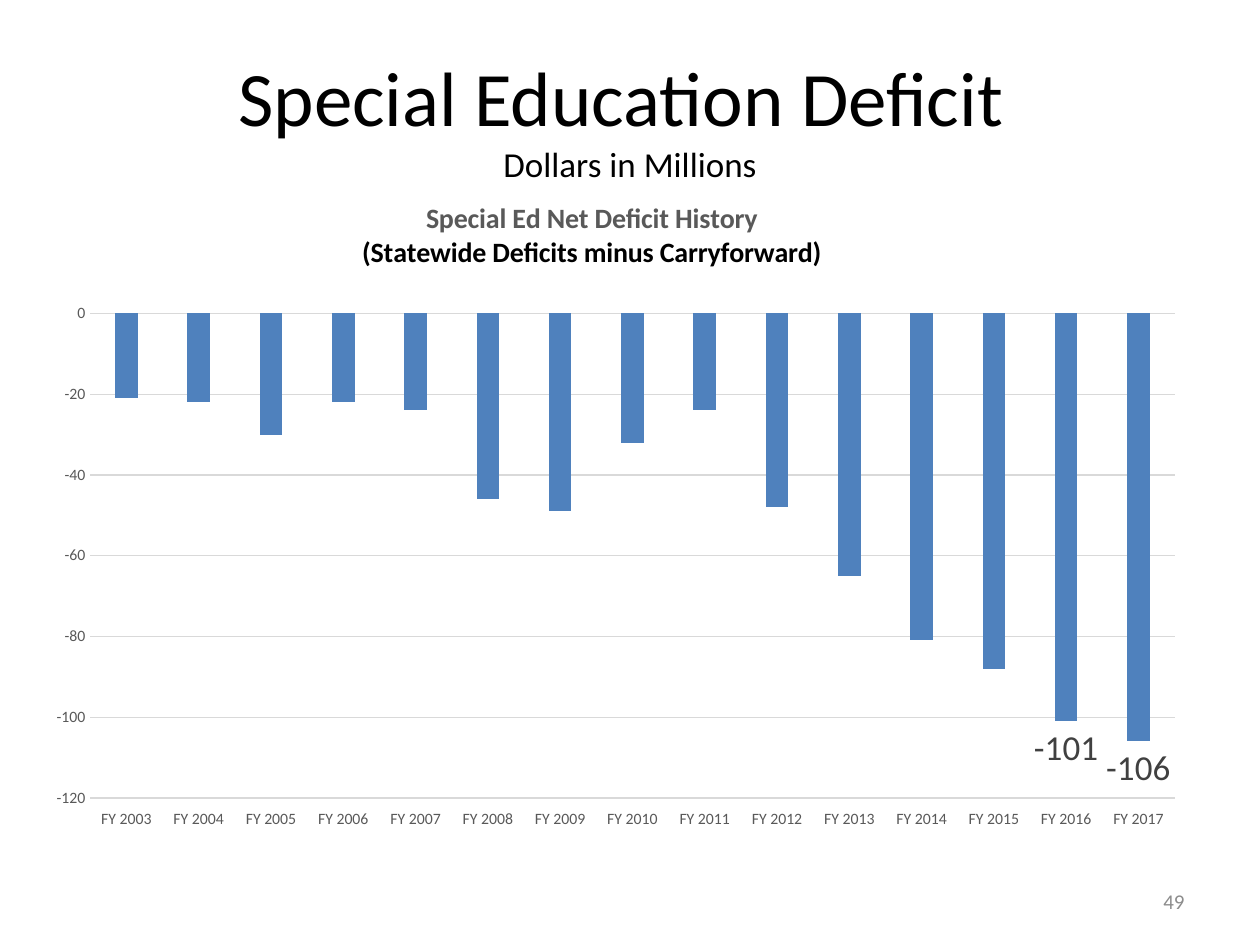
from lxml import etree
from pptx import Presentation
from pptx.chart.data import CategoryChartData
from pptx.dml.color import RGBColor
from pptx.enum.chart import XL_CHART_TYPE as CHART, XL_LABEL_POSITION as LABEL
from pptx.enum.chart import XL_TICK_LABEL_POSITION as TICK_LABEL, XL_TICK_MARK as TICK
from pptx.enum.text import MSO_ANCHOR as ANCHOR, PP_ALIGN as ALIGN
from pptx.oxml.ns import qn
from pptx.util import Emu, Pt

PX = 914400 / 126
FONT = "Calibri"
DEFICITS = [-21, -22, -30, -22, -24, -46, -49, -32, -24, -48, -65, -81, -88, -101, -106]
FIRST_YEAR = 2003
LABELLED = (13, 14)  # the two latest years


def box(*lengths):
    return [Emu(round(n * PX)) for n in lengths]


def rgb(value):
    return RGBColor.from_string(value)


def style(font, size, color, bold=False):
    font.name, font.size, font.bold = FONT, Pt(size), bold
    font.color.rgb = rgb(color)


def add_run(p, text, size, color, bold=False):
    r = p.add_run()
    r.text = text
    style(r.font, size, color, bold)


def add_text(slide, place, lines, align):
    """Add one paragraph whose lines are (text, size, color)."""
    tf = slide.shapes.add_textbox(*box(*place)).text_frame
    tf.word_wrap = True
    tf.vertical_anchor = ANCHOR.MIDDLE
    p = tf.paragraphs[0]
    p.alignment = align
    for i, line in enumerate(lines):
        if i:
            p.add_line_break()
        add_run(p, *line)


def set_layout(parent, **fractions):
    """Place a chart part by fractions of the chart's size."""
    old = parent.find(qn("c:layout"))
    if old is not None:
        parent.remove(old)
    layout = etree.Element(qn("c:layout"))
    parent.insert(0 if parent.find(qn("c:tx")) is None else 1, layout)
    manual = etree.SubElement(layout, qn("c:manualLayout"))
    if "w" in fractions:
        etree.SubElement(manual, qn("c:layoutTarget")).set("val", "inner")
    for mode in ("xMode", "yMode"):
        etree.SubElement(manual, qn(f"c:{mode}")).set("val", "edge")
    for key, value in fractions.items():
        etree.SubElement(manual, qn(f"c:{key}")).set("val", str(value))


def add_chart_title(chart, lines):
    title = chart.chart_title
    tf = title.text_frame
    for i, (text, color) in enumerate(lines):
        p = tf.add_paragraph() if i else tf.paragraphs[0]
        p.alignment = ALIGN.CENTER
        add_run(p, text, 16, color, True)
    set_layout(title._element, x=0.28, y=0.01)


def format_axes(chart):
    cat, val = chart.category_axis, chart.value_axis
    for axis in (cat, val):
        axis.major_tick_mark = axis.minor_tick_mark = TICK.NONE
        style(axis.tick_labels.font, 9, "595959")
    cat.tick_label_position = TICK_LABEL.LOW
    val.minimum_scale, val.maximum_scale, val.major_unit = -120, 0, 20
    val.has_major_gridlines = True
    val.format.line.fill.background()
    for line in (cat.format.line, val.major_gridlines.format.line):
        line.color.rgb = rgb("D9D9D9")
        line.width = Pt(0.75)


def add_deficit_chart(slide, place):
    data = CategoryChartData()
    data.categories = [f"FY {FIRST_YEAR + i}" for i in range(len(DEFICITS))]
    data.add_series("Series 1", DEFICITS)
    chart = slide.shapes.add_chart(CHART.COLUMN_CLUSTERED, *box(*place), data).chart
    style(chart.font, 10, "000000")
    chart.has_legend = False
    add_chart_title(chart, [("Special Ed Net Deficit History", "595959"),
                            ("(Statewide Deficits minus Carryforward)", "000000")])
    format_axes(chart)

    # Columns, with values on the latest years only
    plot = chart.plots[0]
    set_layout(plot._element.getparent(), x=0.05, y=0.19, w=0.93, h=0.74)
    plot.gap_width = 219
    plot.vary_by_categories = False
    series = plot.series[0]
    series.invert_if_negative = False
    series.format.fill.solid()
    series.format.fill.fore_color.rgb = rgb("4F81BD")
    series.data_labels.show_value = False
    for i in LABELLED:
        label = series.points[i].data_label
        style(label.font, 20, "404040")
        label.position = LABEL.OUTSIDE_END


def main():
    prs = Presentation()
    prs.slide_width, prs.slide_height = box(1260, 945)
    slide = prs.slides.add_slide(prs.slide_layouts[6])

    # Heading
    add_text(slide, (63, 38, 1134, 158),
             [("Special Education Deficit ", 44, "000000"),
              ("Dollars in Millions", 20, "000000")], ALIGN.CENTER)
    # Chart
    add_deficit_chart(slide, (32, 189, 1166, 655))
    # Page number
    add_text(slide, (903, 876, 294, 50), [("49", 12, "8C8C8C")], ALIGN.RIGHT)

    prs.save("out.pptx")


if __name__ == "__main__":
    main()
